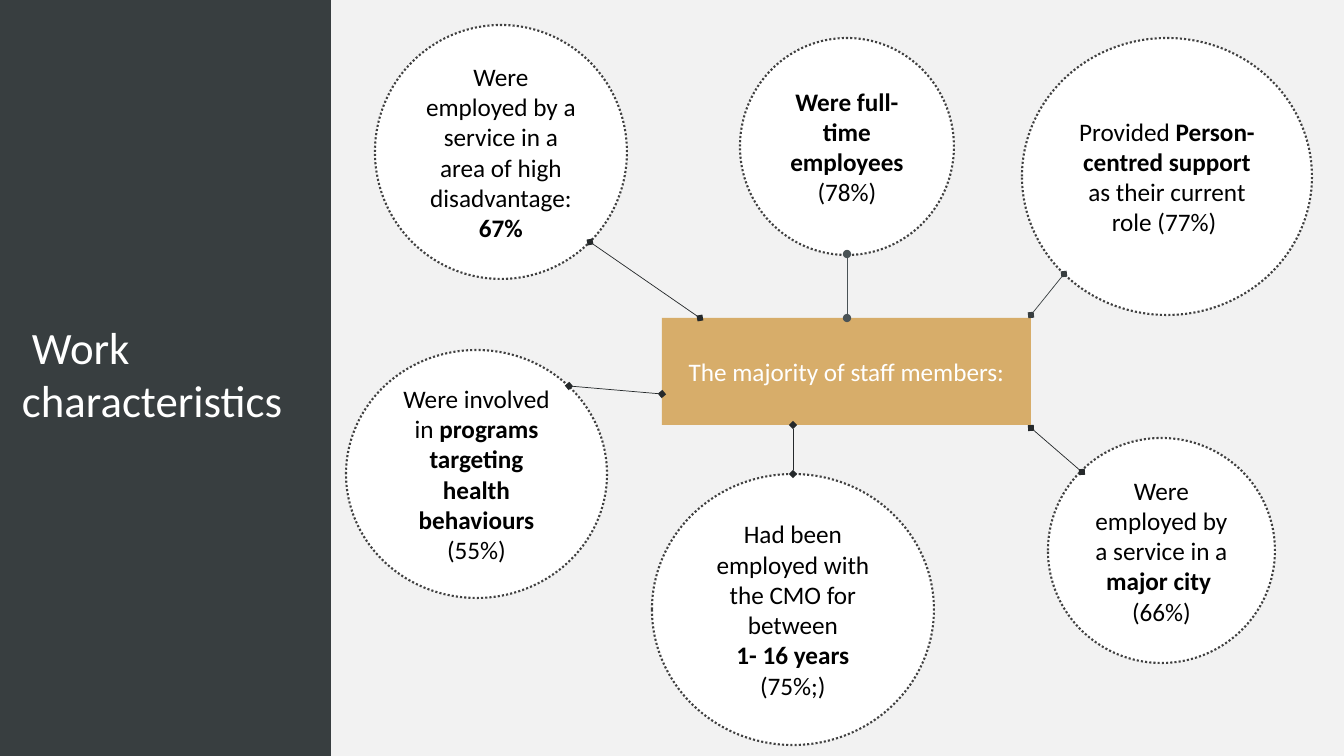
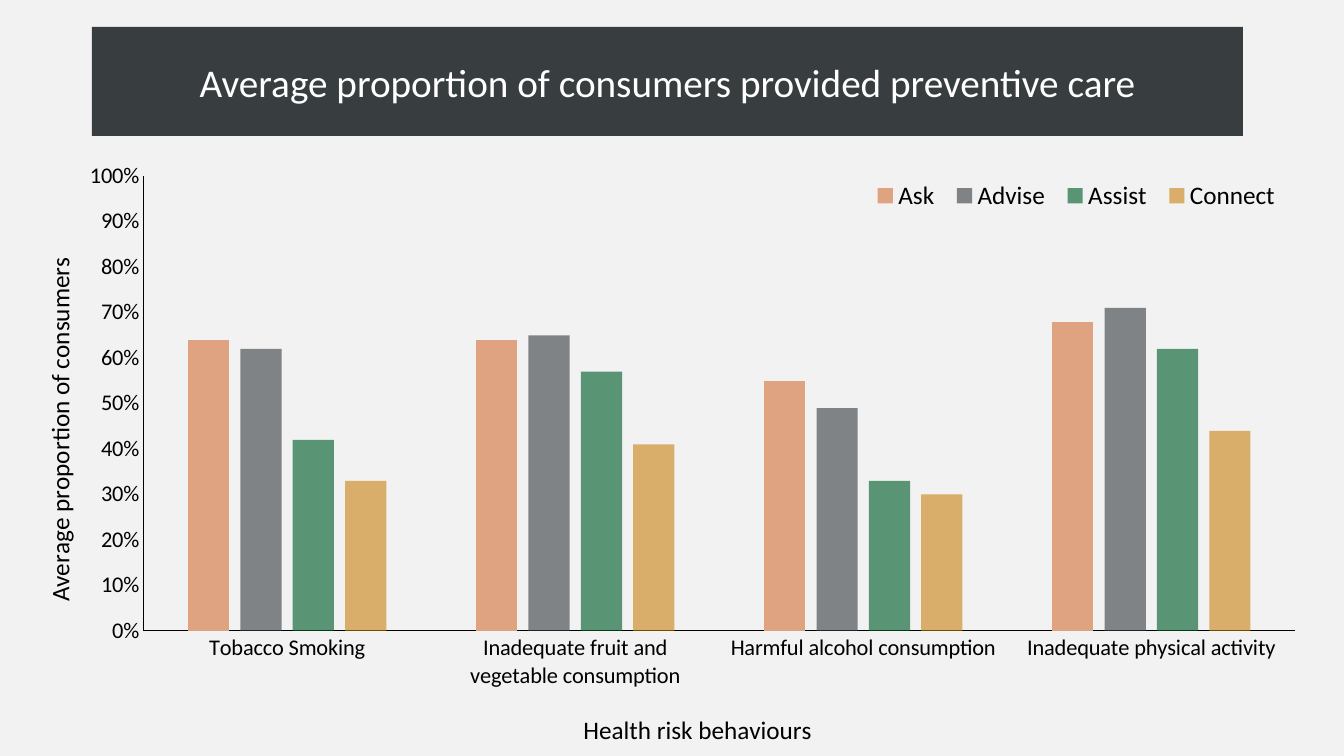
from dataclasses import dataclass
from typing import Any

import pptx
import pptx.chart.data
import pptx.dml.color
import pptx.enum.chart
import pptx.enum.dml
import pptx.enum.shapes
import pptx.enum.text
import pptx.oxml.ns
import pptx.oxml.xmlchemy
import pptx.util

# Shared scale, font and colours
EMU_PER_PX = 914400 / 100.8
FONT = "Calibri"
BACKGROUND = "F2F2F2"
DARK = "383E40"
INK = "25292B"
OUTLINE = "404040"
GOLD = "D7AD6A"
BLACK = "000000"
WHITE = "FFFFFF"

SHAPE = pptx.enum.shapes.MSO_SHAPE
ALIGN = pptx.enum.text.PP_ALIGN
ANCHOR = pptx.enum.text.MSO_ANCHOR
qn = pptx.oxml.ns.qn
new_element = pptx.oxml.xmlchemy.OxmlElement


@dataclass(frozen=True)
class Box:
    x: int
    y: int
    w: int
    h: int


@dataclass(frozen=True)
class Bubble:
    box: Box
    paragraphs: list[str]  # text between asterisks is bold


@dataclass(frozen=True)
class Link:
    x1: int
    y1: int
    x2: int
    y2: int
    color: str = INK
    end: str = "diamond"


@dataclass(frozen=True)
class Series:
    name: str
    values: tuple[float, ...]
    color: str
    alpha: int = 100


BUBBLES = [
    Bubble(Box(375, 25, 252, 254),
           ["Were employed by a service in a area of high disadvantage: *67%*"]),
    Bubble(Box(740, 38, 214, 217), ["*Were full-time employees *(78%)"]),
    Bubble(Box(1022, 38, 290, 277),
           ["Provided *Person-centred support *as their current role (77%) "]),
    Bubble(Box(346, 350, 261, 248),
           ["Were involved in *programs targeting health behaviours*", "(55%)"]),
    Bubble(Box(652, 474, 282, 271),
           ["Had been employed with the CMO for between", "*1- 16 years*", "(75%;)"]),
    Bubble(Box(1048, 438, 227, 225),
           ["Were employed by a service in a *major city *", "(66%)"]),
]
LINKS = [
    Link(847, 318, 847, 254, "4A5356", "oval"),
    Link(1064, 274, 1031, 315, DARK),
    Link(1082, 472, 1031, 428),
    Link(793, 474, 793, 425),
    Link(569, 386, 662, 394),
    Link(590, 242, 700, 318),
]
BEHAVIOURS = ["Tobacco Smoking", "Inadequate fruit and vegetable consumption",
              "Harmful alcohol consumption", "Inadequate physical activity"]
CARE = [
    Series("Ask", (0.64, 0.64, 0.55, 0.68), "E0A382"),
    Series("Advise", (0.62, 0.65, 0.49, 0.71), "373E40", 61),
    Series("Assist", (0.42, 0.57, 0.33, 0.62), "00602B", 63),
    Series("Connect", (0.33, 0.41, 0.3, 0.44), "C67D08", 58),
]


# Helpers
def px(n: float) -> pptx.util.Emu:
    return pptx.util.Emu(round(n * EMU_PER_PX))


def rgb(color: str) -> pptx.dml.color.RGBColor:
    return pptx.dml.color.RGBColor.from_string(color)


def set_fill(fill: Any, color: str) -> None:
    fill.solid()
    fill.fore_color.rgb = rgb(color)


def set_font(font: Any, size: int, color: str = BLACK, bold: bool = False) -> None:
    font.name = FONT
    font.size = pptx.util.Pt(size)
    font.bold = bold
    font.color.rgb = rgb(color)


def write(tf: Any, paragraphs: list[str], *, size: int = 18, color: str = BLACK,
          align: Any = ALIGN.CENTER) -> None:
    tf.word_wrap = True
    tf.vertical_anchor = ANCHOR.MIDDLE
    for i, text in enumerate(paragraphs):
        p = tf.paragraphs[0] if i == 0 else tf.add_paragraph()
        p.alignment = align
        for j, part in enumerate(text.split("*")):
            if part:
                r = p.add_run()
                r.text = part
                set_font(r.font, size, color, bold=j % 2 == 1)


def add_title(s: Any, box: Box, paragraphs: list[str], **text_format: Any) -> Any:
    """Turn the title placeholder into a dark band."""
    sp = s.shapes.title
    sp.left, sp.top, sp.width, sp.height = px(box.x), px(box.y), px(box.w), px(box.h)
    set_fill(sp.fill, DARK)
    tf = sp.text_frame
    tf.auto_size = pptx.enum.text.MSO_AUTO_SIZE.NONE
    write(tf, paragraphs, color=WHITE, **text_format)
    return tf


def add_shape(s: Any, kind: Any, box: Box, fill: str) -> Any:
    sp = s.shapes.add_shape(kind, px(box.x), px(box.y), px(box.w), px(box.h))
    sp.shadow.inherit = False
    set_fill(sp.fill, fill)
    sp.line.fill.background()
    return sp


def add_bubble(s: Any, bubble: Bubble) -> None:
    sp = add_shape(s, SHAPE.OVAL, bubble.box, WHITE)
    set_fill(sp.line.fill, OUTLINE)
    sp.line.width = pptx.util.Pt(1.5)
    sp.line.dash_style = pptx.enum.dml.MSO_LINE.ROUND_DOT
    write(sp.text_frame, bubble.paragraphs)


def add_link(s: Any, link: Link) -> None:
    cxn = s.shapes.add_connector(pptx.enum.shapes.MSO_CONNECTOR.STRAIGHT, px(link.x1),
                                 px(link.y1), px(link.x2), px(link.y2))
    cxn.line.color.rgb = rgb(link.color)
    cxn.line.width = pptx.util.Pt(0.5)
    ln = cxn.line._get_or_add_ln()
    for tag in ("a:headEnd", "a:tailEnd"):
        end = new_element(tag)
        end.set("type", link.end)
        ln.append(end)
    cxn._element.spPr.append(new_element("a:effectLst"))


def set_layout(parent: Any, after: str | None, inner: bool = False,
               **edges: float) -> None:
    """Place a chart part by fractions of the chart area."""
    for old in parent.findall(qn("c:layout")):
        parent.remove(old)
    layout = new_element("c:layout")
    manual = new_element("c:manualLayout")
    layout.append(manual)
    values = {"layoutTarget": "inner"} if inner else {}
    values |= {"xMode": "edge", "yMode": "edge"} | {k: str(v) for k, v in edges.items()}
    for tag, value in values.items():
        item = new_element(f"c:{tag}")
        item.set("val", value)
        manual.append(item)
    if after:
        parent.find(qn(after)).addnext(layout)
    else:
        parent.insert(0, layout)


def format_axis(axis: Any, title: str, x: float, y: float) -> None:
    axis.has_major_gridlines = False
    axis.major_tick_mark = axis.minor_tick_mark = pptx.enum.chart.XL_TICK_MARK.NONE
    axis.format.line.color.rgb = rgb(BLACK)
    axis.format.line.width = pptx.util.Pt(0.75)
    set_font(axis.tick_labels.font, 16)
    p = axis.axis_title.text_frame.paragraphs[0]
    r = p.add_run()
    r.text = title
    set_font(r.font, 18)
    set_layout(axis.axis_title._element, "c:tx", x=x, y=y)


def add_care_chart(s: Any, box: Box) -> None:
    data = pptx.chart.data.CategoryChartData(number_format="0%")
    data.categories = BEHAVIOURS
    for series in CARE:
        data.add_series(series.name, series.values)
    chart = s.shapes.add_chart(pptx.enum.chart.XL_CHART_TYPE.COLUMN_CLUSTERED, px(box.x),
                               px(box.y), px(box.w), px(box.h), data).chart
    chart.has_title = False
    set_font(chart.font, 10)
    set_layout(chart._chartSpace.chart.plotArea, None, inner=True,
               x=0.093, y=0.04, w=0.907, h=0.753)

    # Columns
    plot = chart.plots[0]
    plot.vary_by_categories = False
    plot.gap_width = 218
    plot.overlap = -27
    for drawn, series in zip(plot.series, CARE):
        drawn.invert_if_negative = False
        set_fill(drawn.format.fill, series.color)
        if series.alpha < 100:
            alpha = new_element("a:alpha")
            alpha.set("val", str(series.alpha * 1000))
            drawn._element.spPr.find(".//" + qn("a:srgbClr")).append(alpha)

    # Axes and legend
    format_axis(chart.category_axis, "Health risk behaviours", 0.436, 0.92)
    value_axis = chart.value_axis
    format_axis(value_axis, "Average proportion of consumers", 0.01, 0.167)
    value_axis.minimum_scale, value_axis.maximum_scale = 0, 1
    value_axis.major_unit = 0.1
    value_axis.tick_labels.number_format = "0%"
    value_axis.tick_labels.number_format_is_linked = False
    chart.has_legend = True
    legend = chart.legend
    legend.position = pptx.enum.chart.XL_LEGEND_POSITION.BOTTOM
    legend.include_in_layout = False
    set_font(legend.font, 18)
    set_layout(legend._element, "c:legendPos", x=0.66, y=0.04, w=0.335, h=0.065)


# Slides
def build_work_slide(s: Any) -> None:
    tf = add_title(s, Box(0, 0, 331, 756), ["Work", "characteristics"],
                   size=32, align=ALIGN.LEFT)
    tf.margin_left = px(22)
    tf.margin_bottom = px(15)
    tf.paragraphs[0]._p.get_or_add_pPr().set("indent", str(px(10)))
    for bubble in BUBBLES:
        add_bubble(s, bubble)
    hub = add_shape(s, SHAPE.RECTANGLE, Box(662, 318, 369, 107), GOLD)
    write(hub.text_frame, ["The majority of staff members:"], color=WHITE)
    for link in LINKS:
        add_link(s, link)


def build_care_slide(s: Any) -> None:
    add_title(s, Box(92, 27, 1151, 109),
              ["Average proportion of consumers provided preventive care"], size=28)
    add_care_chart(s, Box(25, 152, 1271, 604))


def main() -> None:
    prs = pptx.Presentation()
    prs.slide_width, prs.slide_height = px(1344), px(756)
    set_fill(prs.slide_master.background.fill, BACKGROUND)
    title_only = prs.slide_layouts[5]
    for build in (build_work_slide, build_care_slide):
        build(prs.slides.add_slide(title_only))
    prs.save("out.pptx")


if __name__ == "__main__":
    main()
